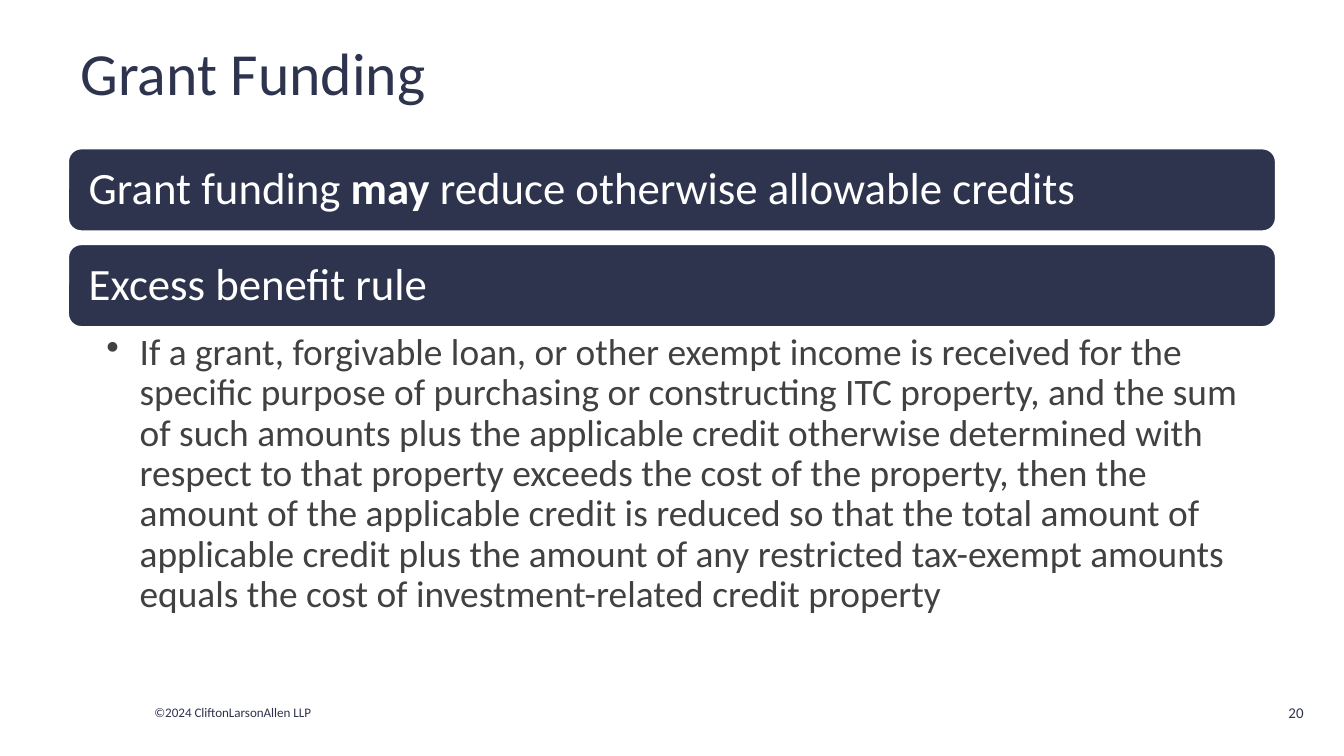
from dataclasses import dataclass

from lxml import etree
from pptx import Presentation
from pptx.dml.color import RGBColor
from pptx.enum.shapes import MSO_SHAPE
from pptx.enum.text import MSO_ANCHOR, MSO_AUTO_SIZE, PP_ALIGN
from pptx.oxml.ns import qn
from pptx.util import Cm, Pt

ROUND = MSO_SHAPE.ROUNDED_RECTANGLE
MIDDLE, TOP = MSO_ANCHOR.MIDDLE, MSO_ANCHOR.TOP
LEFT, RIGHT = PP_ALIGN.LEFT, PP_ALIGN.RIGHT
FIXED = MSO_AUTO_SIZE.NONE
TITLE_ONLY = 5


@dataclass(frozen=True)
class Theme:
    """Hold the font, colours and type sizes of the slide."""
    font: str = "Calibri"
    navy: RGBColor = RGBColor(0x2E, 0x33, 0x4E)
    white: RGBColor = RGBColor(0xFF, 0xFF, 0xFF)
    gray: RGBColor = RGBColor(0x41, 0x41, 0x42)
    title: int = 32
    bar: int = 24
    body: int = 20
    page: int = 8
    foot: int = 7


THEME = Theme()
EDGE, WIDTH = 1.27, 22.86
BAR_TOP, BAR_TALL, BAR_STEP = 2.79, 1.6, 1.81
BARS = (
    (("Grant funding ", False), ("may", True),
     (" reduce otherwise allowable credits", False)),
    (("Excess benefit rule", False),),
)
RULE = (
    "If a grant, forgivable loan, or other exempt income is received for the "
    "specific purpose of purchasing or constructing ITC property, and the sum "
    "of such amounts plus the applicable credit otherwise determined with "
    "respect to that property exceeds the cost of the property, then the "
    "amount of the applicable credit is reduced so that the total amount of "
    "applicable credit plus the amount of any restricted tax-exempt amounts "
    "equals the cost of investment-related credit property"
)


def style(para, size, color, align=LEFT):
    """Set the font and alignment of a paragraph."""
    para.alignment = align
    font = para.font
    font.name, font.size = THEME.font, Pt(size)
    font.color.rgb = color


def setup(frame, anchor=MIDDLE, left=0.25, right=0.25, edge=0.13):
    """Set wrapping, anchor and margins of a text frame."""
    frame.word_wrap = True
    frame.auto_size = FIXED
    frame.vertical_anchor = anchor
    frame.margin_left, frame.margin_right = Cm(left), Cm(right)
    frame.margin_top = frame.margin_bottom = Cm(edge)


def add_title(slide, text):
    """Fill and place the title placeholder."""
    title = slide.shapes.title
    title.left, title.top = Cm(EDGE), Cm(0.41)
    title.width, title.height = Cm(WIDTH), Cm(1.9)
    setup(title.text_frame)
    title.text_frame.text = text
    style(title.text_frame.paragraphs[0], THEME.title, THEME.navy)


def add_bar(slide, top, runs):
    """Add a rounded heading bar with its runs of text."""
    bar = slide.shapes.add_shape(
        ROUND, Cm(EDGE), Cm(top), Cm(WIDTH), Cm(BAR_TALL))
    bar.shadow.inherit = False
    bar.fill.solid()
    bar.fill.fore_color.rgb = THEME.navy
    bar.line.color.rgb = THEME.white
    bar.line.width = Pt(2)
    setup(bar.text_frame, left=0.33, right=0.33)
    para = bar.text_frame.paragraphs[0]
    para.line_spacing = 0.9
    style(para, THEME.bar, THEME.white)
    for text, bold in runs:
        run = para.add_run()
        run.text = text
        if bold:
            run.font.bold = True


def add_bullet(slide, text):
    """Add the bulleted body text below the bars."""
    box = slide.shapes.add_textbox(Cm(EDGE), Cm(6.2), Cm(WIDTH), Cm(5.69))
    setup(box.text_frame, TOP, 0.74, 0.5, 0.1)
    para = box.text_frame.paragraphs[0]
    para.text = text
    props = para._p.get_or_add_pPr()
    indent = Cm(0.63)
    props.set("marL", str(indent))
    props.set("indent", str(-indent))
    etree.SubElement(props, qn("a:buChar"), char="•")
    para.line_spacing = 0.9
    style(para, THEME.body, THEME.gray)


def add_label(slide, text, place, size, align=LEFT):
    """Add a small line of footer text."""
    box = slide.shapes.add_textbox(*map(Cm, place))
    setup(box.text_frame)
    para = box.text_frame.paragraphs[0]
    para.text = text
    style(para, size, THEME.navy, align)


def main():
    """Build the slide and save it."""
    deck = Presentation()
    deck.slide_width, deck.slide_height = Cm(25.4), Cm(14.29)
    slide = deck.slides.add_slide(deck.slide_layouts[TITLE_ONLY])
    add_title(slide, "Grant Funding")
    for row, runs in enumerate(BARS):
        add_bar(slide, BAR_TOP + row * BAR_STEP, runs)
    add_bullet(slide, RULE)
    add_label(slide, "©2024 CliftonLarsonAllen LLP",
              (2.67, 13.18, 3.84, 0.56), THEME.foot)
    add_label(slide, "20", (23.8, 12.98, 1.09, 0.97), THEME.page, RIGHT)
    deck.save("out.pptx")


if __name__ == "__main__":
    main()
